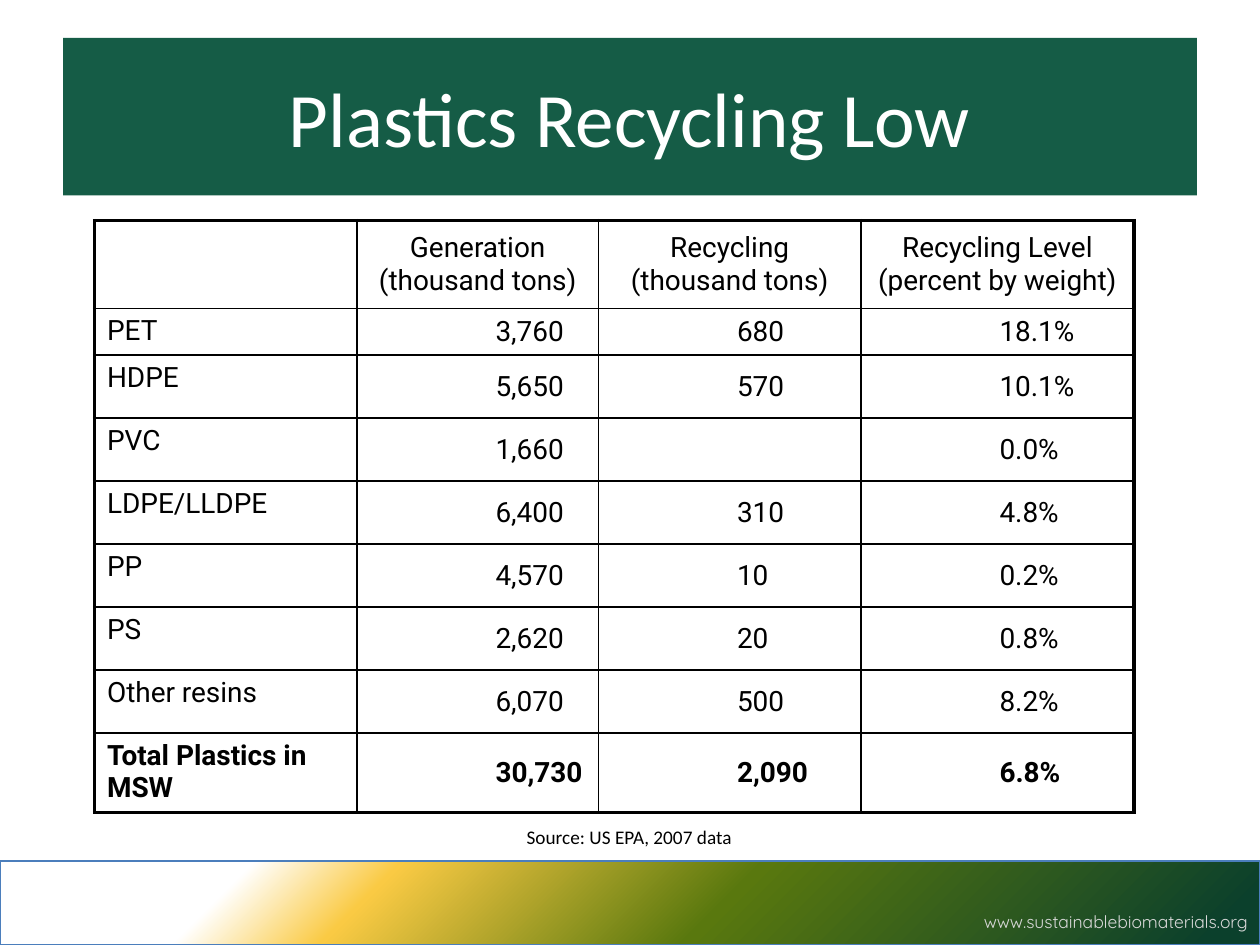
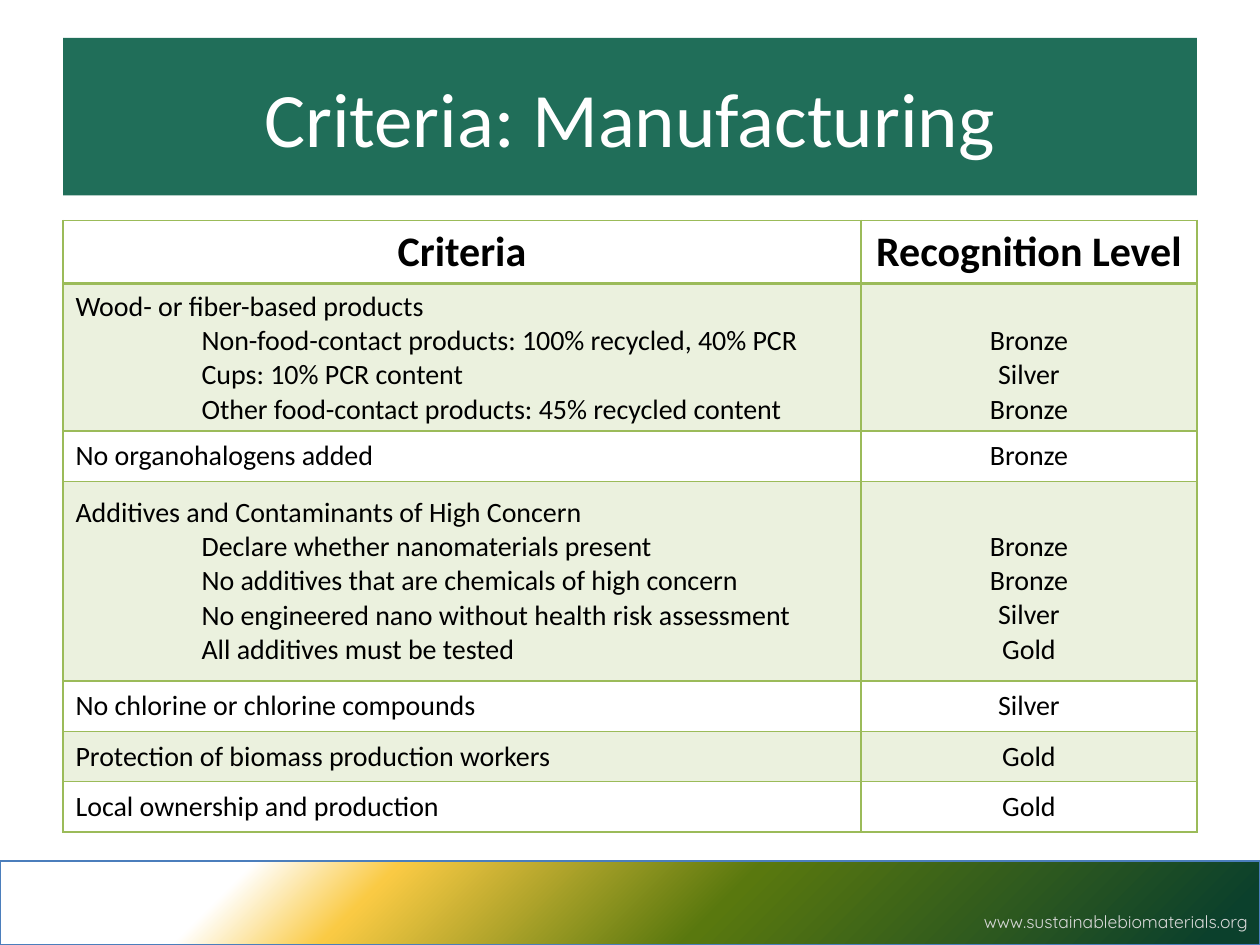
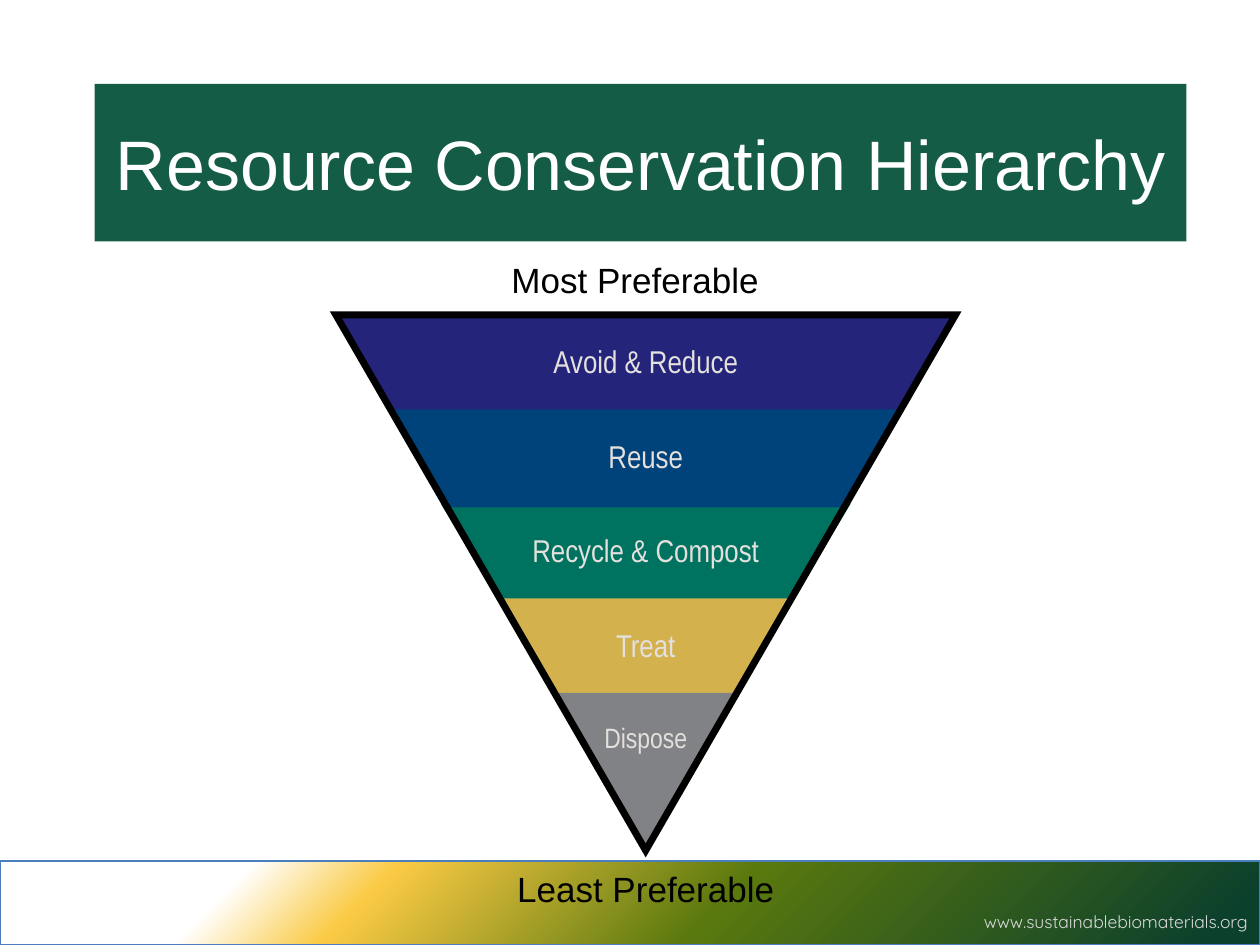
import lxml.etree
import pptx
import pptx.dml.color
import pptx.enum.shapes
import pptx.enum.text
import pptx.oxml
import pptx.oxml.ns
import pptx.util

Pt = pptx.util.Pt
ALIGN = pptx.enum.text.PP_ALIGN
ANCHOR = pptx.enum.text.MSO_ANCHOR
SHAPE = pptx.enum.shapes.MSO_SHAPE
qn = pptx.oxml.ns.qn

# Shared look
BLACK, WHITE = "000000", "FFFFFF"
FOREST, TEAL = "155C46", "206E59"
GRID_GREEN, BAND_GREEN = "9BBB59", "EBF1DE"
FOOTER_TEXT = "www.sustainablebiomaterials.org"
FOOTER_BOX = (0, 492, 720, 48)
FOOTER_STOPS = [(4, "0B402C"), (43, "59780E"), (70, "FACA44"), (81, WHITE)]
FOOTER_FONT = {"name": "Quicksand", "size": Pt(10), "color": "D9D9D9"}
TITLE_BOX = (36, 21.6, 648, 90)
TITLE_FONT = {"name": "Calibri", "size": Pt(44), "color": WHITE}

# Slide 1
RECYCLING_ROWS = [
    ("", "Generation\n(thousand tons)", "Recycling\n(thousand tons)",
     "Recycling Level\n(percent by weight)"),
    ("PET", "3,760", "680", "18.1%"),
    ("HDPE", "5,650", "570", "10.1%"),
    ("PVC", "1,660", "", "0.0%"),
    ("LDPE/LLDPE", "6,400", "310", "4.8%"),
    ("PP", "4,570", "10", "0.2%"),
    ("PS", "2,620", "20", "0.8%"),
    ("Other resins", "6,070", "500", "8.2%"),
    ("Total Plastics in MSW", "30,730", "2,090", "6.8%"),
]
RECYCLING_WIDTHS = [150, 138, 150, 156]
RECYCLING_HEIGHTS = [50.4, 24] + [36] * 7
RECYCLING_FONT = {"name": "Roboto", "size": Pt(16), "color": BLACK}
SOURCE_NOTE = "Source: US EPA, 2007 data"
SOURCE_FONT = {"name": "Calibri", "size": Pt(11), "color": BLACK}

# Slide 2: a criterion with its indented details, then the levels
CRITERIA_HEADER = (["Criteria"], ["Recognition Level"])
CRITERIA_ROWS = [
    (["Wood- or fiber-based products",
      "Non-food-contact products: 100% recycled, 40% PCR",
      "Cups: 10% PCR content",
      "Other food-contact products: 45% recycled content"],
     ["Bronze", "Silver", "Bronze"]),
    (["No organohalogens added"], ["Bronze"]),
    (["Additives and Contaminants of High Concern",
      "Declare whether nanomaterials present",
      "No additives that are chemicals of high concern",
      "No engineered nano without health risk assessment",
      "All additives must be tested"],
     ["Bronze", "Bronze", "Silver", "Gold"]),
    (["No chlorine or chlorine compounds"], ["Silver"]),
    (["Protection of biomass production workers"], ["Gold"]),
    (["Local ownership and production"], ["Gold"]),
]
CRITERIA_WIDTHS = [456, 192]
CRITERIA_HEIGHTS = [28.8] * 3 + [114] + [28.8] * 3
CRITERIA_FONT = {"name": "Calibri", "size": Pt(16), "color": BLACK}
CRITERIA_HEADER_FONT = {**CRITERIA_FONT, "size": Pt(24), "bold": True}
CRITERIA_LINE_HEIGHT = 19.53
CELL_MARGIN = 3.6

# Slide 3: label, colour, top width, bottom width, label width
TIERS = [
    ("Avoid & Reduce", "25247B", 354, 287, 294),
    ("Reuse", "00427A", 294, 222, 222),
    ("Recycle & Compost", "007360", 234, 166, 150),
    ("Treat", "D3B14D", 162, 100, 90),
]
TIER_DRAWING_ORDER = [2, 3, 0, 1]
PYRAMID_CENTRE, PYRAMID_TOP = 369, 180
PYRAMID_WIDTH, PYRAMID_HEIGHT = 354, 306
TIER_STEP, TIER_HEIGHT = 54, 56
TIER_FONT = {"name": "Arial Narrow", "size": Pt(18), "color": "E3E0DD"}
EXTREMES = [("Most Preferable", (66, 144, 594, 31)),
            ("Least Preferable", (72, 492, 594, 31))]
EXTREME_FONT = {"name": "Arial", "size": Pt(20), "color": BLACK}


def rgb(value):
    return pptx.dml.color.RGBColor.from_string(value)


def points(values):
    return [Pt(value) for value in values]


def paint(item, colour):
    item.fill.solid()
    item.fill.fore_color.rgb = rgb(colour)


def write(frame, lines, font_values, alignment=ALIGN.LEFT, indents=()):
    """Fill a text frame, one paragraph a line; indents are left margins."""
    frame.word_wrap = True
    for index, line in enumerate(lines):
        paragraph = frame.add_paragraph() if index else frame.paragraphs[0]
        paragraph.text = line
        paragraph.alignment = alignment
        if index < len(indents) and indents[index]:
            properties = paragraph._p.get_or_add_pPr()
            properties.set("marL", str(Pt(indents[index])))
        for name, value in font_values.items():
            if name == "color":
                paragraph.font.color.rgb = rgb(value)
            else:
                setattr(paragraph.font, name, value)


def add_text(slide, box, text, font_values, alignment=ALIGN.CENTER):
    text_box = slide.shapes.add_textbox(*points(box))
    write(text_box.text_frame, [text], font_values, alignment)
    return text_box


def add_plain_shape(slide, kind, box, fill=None):
    shape = slide.shapes.add_shape(kind, *points(box))
    shape.shadow.inherit = False
    shape.line.fill.background()
    if fill:
        paint(shape, fill)
    else:
        shape.fill.background()
    return shape


def add_footer(slide):
    band = add_plain_shape(slide, SHAPE.RECTANGLE, FOOTER_BOX, WHITE)
    band.line.color.rgb = rgb("4B7EBC")
    band.line.width = Pt(0.75)
    stops = "".join(
        f'<a:gs pos="{position * 1000}"><a:srgbClr val="{colour}"/></a:gs>'
        for position, colour in FOOTER_STOPS)
    gradient = pptx.oxml.parse_xml(
        f'<a:gradFill {pptx.oxml.ns.nsdecls("a")} rotWithShape="1">'
        f'<a:gsLst>{stops}</a:gsLst><a:path path="circle">'
        '<a:fillToRect l="100000" t="100000"/></a:path>'
        '<a:tileRect r="-100000" b="-100000"/></a:gradFill>')
    properties = band._element.spPr
    properties.replace(properties.find(qn("a:solidFill")), gradient)
    add_text(slide, (349.2, 517, 370.8, 19.4), FOOTER_TEXT, FOOTER_FONT,
             ALIGN.RIGHT)


def add_slide(presentation, title, fill=FOREST, box=TITLE_BOX, **font_changes):
    slide = presentation.slides.add_slide(presentation.slide_layouts[5])
    add_footer(slide)
    placeholder = slide.shapes.title
    for name, value in zip(("left", "top", "width", "height"), points(box)):
        setattr(placeholder, name, value)
    paint(placeholder, fill)
    write(placeholder.text_frame, [title], {**TITLE_FONT, **font_changes},
          ALIGN.CENTER)
    placeholder.text_frame.vertical_anchor = ANCHOR.MIDDLE
    return slide


def add_grid(slide, left, top, widths, heights):
    """Add an unstyled table of the given column widths and row heights."""
    box = points((left, top, sum(widths), sum(heights)))
    table = slide.shapes.add_table(len(heights), len(widths), *box).table
    table.first_row = table.horz_banding = False
    for column, width in zip(table.columns, widths):
        column.width = Pt(width)
    for row, height in zip(table.rows, heights):
        row.height = Pt(height)
    return table


def set_borders(cell, colour, left=1, right=1, top=1, bottom=1):
    properties = cell._tc.get_or_add_tcPr()
    sides = {"L": left, "R": right, "T": top, "B": bottom}
    for index, (side, width) in enumerate(sides.items()):
        properties.insert(index, pptx.oxml.parse_xml(
            f'<a:ln{side} {pptx.oxml.ns.nsdecls("a")} w="{Pt(width)}">'
            f'<a:solidFill><a:srgbClr val="{colour}"/></a:solidFill>'
            f'</a:ln{side}>'))


def build_recycling(presentation):
    slide = add_slide(presentation, "Plastics Recycling Low")
    table = add_grid(slide, 54, 126, RECYCLING_WIDTHS, RECYCLING_HEIGHTS)
    last_row, last_column = len(RECYCLING_ROWS) - 1, len(RECYCLING_WIDTHS) - 1
    for r, row in enumerate(RECYCLING_ROWS):
        for c, text in enumerate(row):
            cell = table.cell(r, c)
            paint(cell, WHITE)
            write(cell.text_frame, [text],
                  {**RECYCLING_FONT, "bold": r == last_row},
                  ALIGN.LEFT if r else ALIGN.CENTER,
                  [72 if r and c else 0])
            cell.vertical_anchor = ANCHOR.MIDDLE if c else ANCHOR.TOP
            edges = {"left": c == 0, "right": c == last_column,
                     "top": r == 0, "bottom": r == last_row}
            set_borders(cell, BLACK, **{
                side: 2.25 if outer else 1 for side, outer in edges.items()})
    add_text(slide, (293.8, 468, 162, 21), SOURCE_NOTE, SOURCE_FONT,
             ALIGN.LEFT)


def build_criteria(presentation):
    slide = add_slide(presentation, "Criteria: Manufacturing", TEAL)
    table = add_grid(slide, 36, 126, CRITERIA_WIDTHS, CRITERIA_HEIGHTS)
    for r, row in enumerate([CRITERIA_HEADER] + CRITERIA_ROWS):
        for c, lines in enumerate(row):
            cell = table.cell(r, c)
            if r % 2:
                paint(cell, BAND_GREEN)
            else:
                cell.fill.background()
            centred = c == 1 or r == 0
            write(cell.text_frame, lines,
                  CRITERIA_FONT if r else CRITERIA_HEADER_FONT,
                  ALIGN.CENTER if centred else ALIGN.LEFT,
                  [] if centred else [0] + [72] * (len(lines) - 1))
            cell.vertical_anchor = ANCHOR.MIDDLE
            # Levels line up with the details, below the criterion's own line
            missing_lines = len(row[0]) - len(lines)
            cell.margin_top = Pt(
                round(CELL_MARGIN + missing_lines * CRITERIA_LINE_HEIGHT, 2))
            set_borders(cell, GRID_GREEN, top=2 if r == 1 else 1,
                        bottom=2 if r == 0 else 1)


def add_tier(slide, index):
    label, colour, top_width, bottom_width, label_width = TIERS[index]
    top = PYRAMID_TOP + index * TIER_STEP
    bottom = top + TIER_HEIGHT
    corners = [
        points((PYRAMID_CENTRE + side * width / 2, y))
        for side, width, y in [(-1, top_width, top), (-1, bottom_width, bottom),
                               (1, bottom_width, bottom), (1, top_width, top)]]
    builder = slide.shapes.build_freeform(*corners[0], scale=1.0)
    builder.add_line_segments(corners[1:], close=True)
    tier = builder.convert_to_shape()
    tier.shadow.inherit = False
    tier.line.fill.background()
    paint(tier, colour)
    box = (PYRAMID_CENTRE - label_width / 2, top + 12, label_width, 29)
    label_shape = add_plain_shape(slide, SHAPE.RECTANGLE, box, colour)
    write(label_shape.text_frame, [label], TIER_FONT, ALIGN.CENTER)
    label_shape.text_frame.vertical_anchor = ANCHOR.TOP


def add_down_triangle(slide, top, width, height, fill=None):
    box = (PYRAMID_CENTRE - width / 2, top, width, height)
    triangle = add_plain_shape(slide, SHAPE.ISOSCELES_TRIANGLE, box, fill)
    triangle._element.spPr.get_or_add_xfrm().set("flipV", "1")
    return triangle


def build_hierarchy(presentation):
    slide = add_slide(presentation, "Resource Conservation Hierarchy",
                      box=(54, 48, 624, 90), name="Arial", size=Pt(40))
    for index in TIER_DRAWING_ORDER:
        add_tier(slide, index)
    tip_top = PYRAMID_TOP + len(TIERS) * TIER_STEP
    add_down_triangle(slide, tip_top, 102, 90, "808285")
    add_text(slide, (PYRAMID_CENTRE - 45, tip_top + 12, 90, 27), "Dispose",
             {**TIER_FONT, "size": Pt(16)})
    outline = add_down_triangle(slide, PYRAMID_TOP, PYRAMID_WIDTH,
                                PYRAMID_HEIGHT)
    outline.line.color.rgb = rgb(BLACK)
    outline.line.width = Pt(4)
    line = outline._element.spPr.find(qn("a:ln"))
    lxml.etree.SubElement(line, qn("a:miter")).set("lim", "800000")
    for text, box in EXTREMES:
        add_text(slide, box, text, EXTREME_FONT)


def main():
    presentation = pptx.Presentation()
    presentation.slide_width = Pt(720)
    presentation.slide_height = Pt(540)
    build_recycling(presentation)
    build_criteria(presentation)
    build_hierarchy(presentation)
    presentation.save("out.pptx")


if __name__ == "__main__":
    main()
